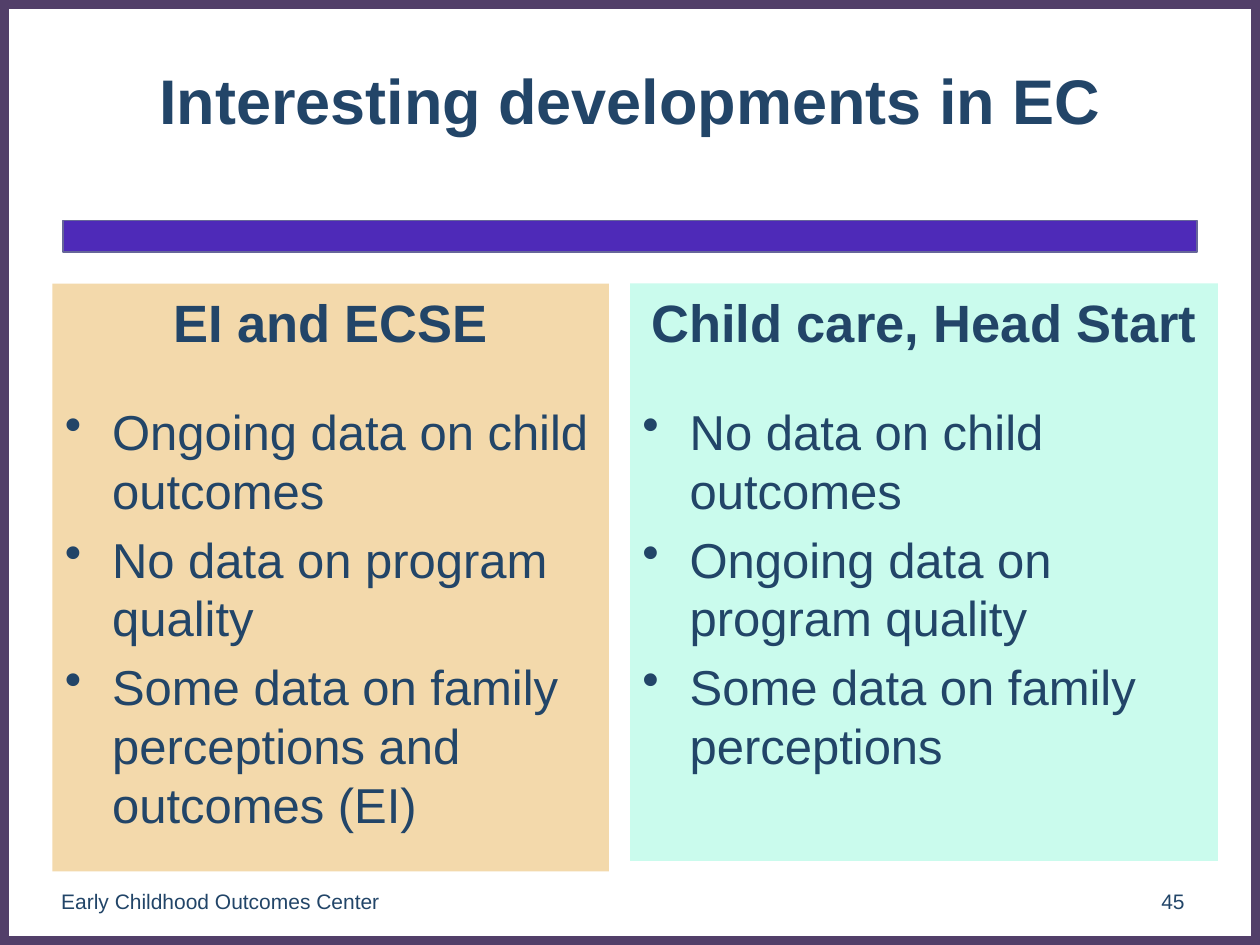
import dataclasses

import lxml.etree
import pptx
import pptx.dml.color
import pptx.enum.shapes
import pptx.enum.text
import pptx.oxml.ns
import pptx.util

Pt = pptx.util.Pt
Align = pptx.enum.text.PP_ALIGN
Anchor = pptx.enum.text.MSO_ANCHOR
INK = "224568"
FONT = "Arial"
LEAD = 1.2
INDENT = 27


@dataclasses.dataclass
class Box:
    left: float
    top: float
    width: float
    height: float

    def points(self) -> list:
        return [Pt(v) for v in (self.left, self.top, self.width, self.height)]


@dataclasses.dataclass
class Panel:
    box: Box
    fill: str
    head: str
    items: list[str]


@dataclasses.dataclass
class Note:
    box: Box
    text: str
    align: Align


PANELS = [
    Panel(Box(30, 162, 318, 336), "F3D9AB", "EI and ECSE", [
        "Ongoing data on child outcomes",
        "No data on program quality",
        "Some data on family perceptions and outcomes (EI)",
    ]),
    Panel(Box(360, 162, 336, 330), "CAFBED", "Child care, Head Start", [
        "No data on child outcomes",
        "Ongoing data on program quality",
        "Some data on family perceptions",
    ]),
]
NOTES = [
    Note(Box(12, 500.5, 228, 28.5), "Early Childhood Outcomes Center",
         Align.CENTER),
    Note(Box(516, 500.5, 168, 28.5), "45", Align.RIGHT),
]


def color(code: str) -> pptx.dml.color.RGBColor:
    return pptx.dml.color.RGBColor.from_string(code)


def style(para, size: float, align: Align, bold: bool = False) -> None:
    para.alignment = align
    for run in para.runs:
        run.font.name = FONT
        run.font.size = Pt(size)
        run.font.bold = bold
        run.font.color.rgb = color(INK)


def bullet(para) -> None:
    """Give the paragraph a round bullet with a hanging indent."""
    props = para._p.get_or_add_pPr()
    props.set("marL", str(Pt(INDENT)))
    props.set("indent", str(-Pt(INDENT)))
    mark = lxml.etree.SubElement(props, pptx.oxml.ns.qn("a:buChar"))
    mark.set("char", "•")


def add_rect(slide, box: Box, fill: str = "", line: str = "",
             weight: float = 0):
    """Draw a rectangle; an empty colour leaves that part out."""
    kind = pptx.enum.shapes.MSO_SHAPE.RECTANGLE
    rect = slide.shapes.add_shape(kind, *box.points())
    rect.shadow.inherit = False
    if fill:
        rect.fill.solid()
        rect.fill.fore_color.rgb = color(fill)
    else:
        rect.fill.background()
    if line:
        rect.line.color.rgb = color(line)
        rect.line.width = Pt(weight)
    else:
        rect.line.fill.background()
    return rect


def add_panel(slide, panel: Panel) -> None:
    frame = add_rect(slide, panel.box, panel.fill).text_frame
    frame.word_wrap = True
    frame.vertical_anchor = Anchor.TOP
    head = frame.paragraphs[0]
    head.text = panel.head
    style(head, 30, Align.CENTER, True)
    head.line_spacing = Pt(30 * LEAD)
    for i, item in enumerate(panel.items):
        para = frame.add_paragraph()
        para.text = item
        bullet(para)
        style(para, 28, Align.LEFT)
        para.line_spacing = Pt(28 * LEAD)
        para.space_before = Pt(5.6 if i else 28)


def add_note(slide, note: Note) -> None:
    frame = slide.shapes.add_textbox(*note.box.points()).text_frame
    frame.word_wrap = True
    frame.vertical_anchor = Anchor.MIDDLE
    frame.text = note.text
    style(frame.paragraphs[0], 12, note.align)


def set_title(slide, box: Box, text: str) -> None:
    title = slide.shapes.title
    title.left, title.top, title.width, title.height = box.points()
    frame = title.text_frame
    frame.text = text
    frame.word_wrap = True
    frame.auto_size = pptx.enum.text.MSO_AUTO_SIZE.NONE
    frame.vertical_anchor = Anchor.MIDDLE
    para = frame.paragraphs[0]
    style(para, 36, Align.CENTER, True)
    para.line_spacing = Pt(36 * LEAD)


def main() -> None:
    deck = pptx.Presentation()
    deck.slide_width, deck.slide_height = Pt(720), Pt(540)
    slide = deck.slides.add_slide(deck.slide_layouts[5])
    slide.background.fill.solid()
    slide.background.fill.fore_color.rgb = color("FFFFFF")
    add_rect(slide, Box(0, 0, 720, 540), line="523F69", weight=10)
    add_rect(slide, Box(36, 126, 648, 18), "4E2AB8", "666699", 0.75)
    set_title(slide, Box(42, 12, 636, 90), "Interesting developments in EC")
    for panel in PANELS:
        add_panel(slide, panel)
    for note in NOTES:
        add_note(slide, note)
    deck.save("out.pptx")


if __name__ == "__main__":
    main()
